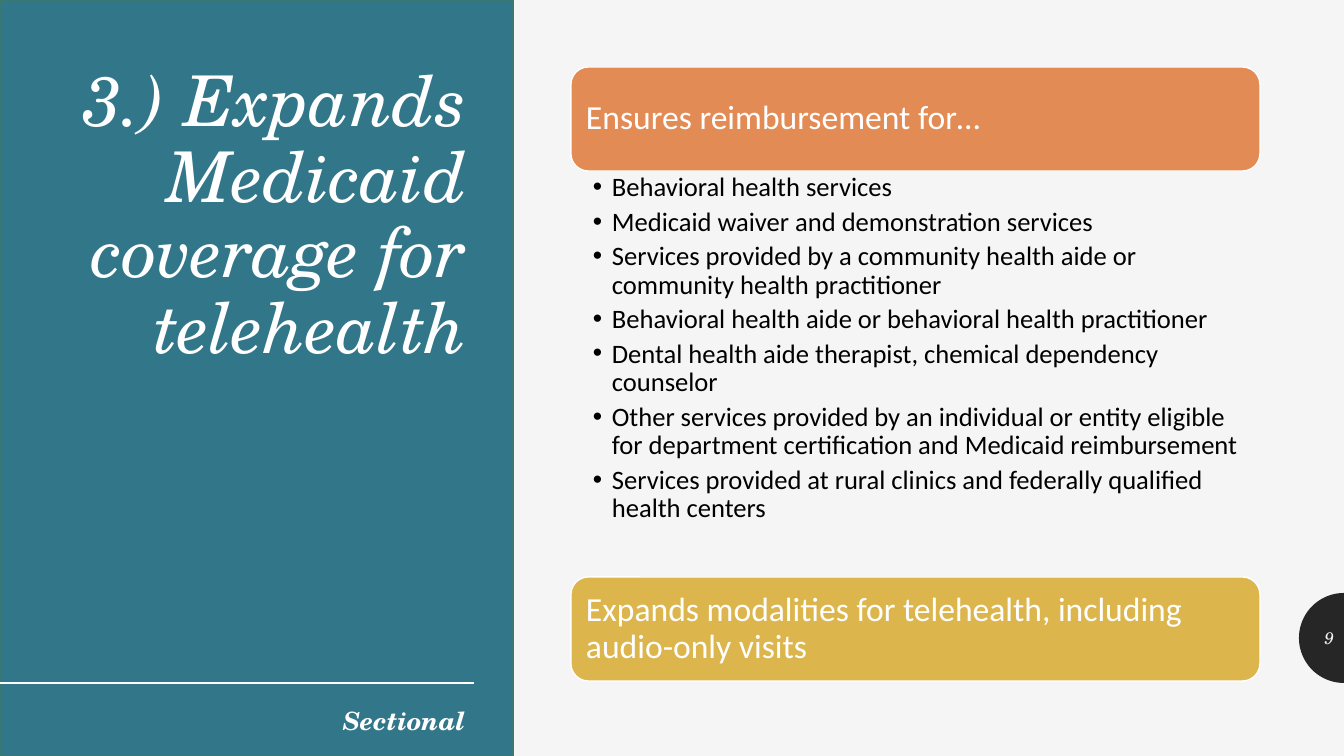
from math import cos, pi, sin

from lxml.etree import SubElement
from pptx import Presentation
from pptx.dml.color import RGBColor
from pptx.enum.shapes import MSO_CONNECTOR, MSO_SHAPE
from pptx.enum.text import MSO_ANCHOR, MSO_AUTO_SIZE, PP_ALIGN
from pptx.oxml.ns import qn
from pptx.util import Pt

EMU_PER_PX = 914400 / 100.8
SLIDE_WIDTH, SLIDE_HEIGHT = 1344, 756
TITLE_ONLY_LAYOUT = 5

COLORS = {
    "background": "F5F5F5",
    "panel": "327689",
    "panel_edge": "397972",
    "tab": "262626",
    "orange": "E28B55",
    "gold": "DCB64D",
    "white": "FFFFFF",
    "black": "000000",
}

SERIF, SANS = "TeX Gyre Schola", "Calibri"
DEFAULT_INSETS = (10, 5, 10, 5)
TITLE_FONT = {"name": SERIF, "size": Pt(50), "italic": True, "bold": False}
NUMBER_FONT = {"name": SERIF, "size": Pt(12), "italic": True}
SECTION_FONT = {"name": SERIF, "size": Pt(18), "italic": True, "bold": True}
CARD_FONT = {"name": SANS, "size": Pt(24)}
BULLET_FONT = {"name": SANS, "size": Pt(19)}

CARD_LEFT, CARD_WIDTH, CARD_HEIGHT = 571, 689, 104
CARDS = [
    (67, "orange", "Ensures reimbursement for…"),
    (577, "gold", "Expands modalities for telehealth, including audio-only visits"),
]
SERVICES = [
    "Behavioral health services",
    "Medicaid waiver and demonstration services",
    "Services provided by a community health aide or community health practitioner",
    "Behavioral health aide or behavioral health practitioner",
    "Dental health aide therapist, chemical dependency counselor",
    "Other services provided by an individual or entity eligible for department "
    "certification and Medicaid reimbursement",
    "Services provided at rural clinics and federally qualified health centers",
]


def px(length):
    return round(length * EMU_PER_PX)


def color(name):
    return RGBColor.from_string(COLORS[name])


def set_attributes(target, values):
    for name, value in values.items():
        setattr(target, name, value)


class SlideBuilder:
    def __init__(self, presentation):
        layout = presentation.slide_layouts[TITLE_ONLY_LAYOUT]
        self.slide = presentation.slides.add_slide(layout)
        self.shapes = self.slide.shapes
        background = self.slide.background.fill
        background.solid()
        background.fore_color.rgb = color("background")

    def paint(self, shape, fill, line=None):
        shape.shadow.inherit = False
        shape.fill.solid()
        shape.fill.fore_color.rgb = color(fill)
        if line:
            shape.line.color.rgb = color(line)
            shape.line.width = Pt(1)
        else:
            shape.line.fill.background()
        return shape

    def box(self, kind, bounds, fill, line):
        shape = self.shapes.add_shape(kind, *map(px, bounds))
        return self.paint(shape, fill, line)

    def half_disc(self, center_x, center_y, radius, fill):
        """Draw the left half of a disc whose flat side is at center_x."""
        steps = 40
        angles = [pi / 2 + pi * step / steps for step in range(steps + 1)]
        points = [
            (px(center_x + radius * cos(angle)), px(center_y + radius * sin(angle)))
            for angle in angles
        ]
        builder = self.shapes.build_freeform(*points[0])
        builder.add_line_segments(points[1:], close=True)
        return self.paint(builder.convert_to_shape(), fill)

    def rule(self, start, end, line):
        connector = self.shapes.add_connector(
            MSO_CONNECTOR.STRAIGHT, *map(px, start + end)
        )
        connector.line.color.rgb = color(line)
        connector.line.width = Pt(2)
        SubElement(connector.element.spPr, qn("a:effectLst"))

    def fill_text(self, shape, texts, font, ink, paragraph_format,
                  anchor=MSO_ANCHOR.TOP, insets=DEFAULT_INSETS, bulleted=False):
        frame = shape.text_frame
        sides = ("margin_left", "margin_top", "margin_right", "margin_bottom")
        set_attributes(frame, dict(zip(sides, map(px, insets))))
        set_attributes(frame, {
            "word_wrap": True,
            "auto_size": MSO_AUTO_SIZE.NONE,
            "vertical_anchor": anchor,
        })
        for index, text in enumerate(texts):
            paragraph = frame.add_paragraph() if index else frame.paragraphs[0]
            set_attributes(paragraph, paragraph_format)
            run = paragraph.add_run()
            run.text = text
            set_attributes(run.font, font)
            run.font.color.rgb = color(ink)
            if bulleted:
                self.add_bullet(paragraph)

    def add_bullet(self, paragraph):
        properties = paragraph._p.get_or_add_pPr()
        properties.set("marL", str(px(19)))
        properties.set("indent", str(-px(19)))
        SubElement(properties, qn("a:buFont")).set("typeface", "Arial")
        SubElement(properties, qn("a:buChar")).set("char", "•")

    def text_box(self, bounds, texts, *style, **options):
        shape = self.shapes.add_textbox(*map(px, bounds))
        self.fill_text(shape, texts, *style, **options)

    def title(self, bounds, text, *style):
        title = self.shapes.title
        sides = ("left", "top", "width", "height")
        set_attributes(title, dict(zip(sides, map(px, bounds))))
        self.fill_text(title, [text], *style)

    def send_behind_title(self, shape):
        self.shapes.title.element.addprevious(shape.element)


def main():
    presentation = Presentation()
    presentation.slide_width = px(SLIDE_WIDTH)
    presentation.slide_height = px(SLIDE_HEIGHT)
    builder = SlideBuilder(presentation)

    builder.half_disc(SLIDE_WIDTH, 638, 45, "tab")
    panel = builder.box(
        MSO_SHAPE.RECTANGLE, (0, 0, 513, SLIDE_HEIGHT), "panel", "panel_edge"
    )
    builder.send_behind_title(panel)
    builder.title(
        (55, 61, 422, 546), "3.) Expands Medicaid coverage for telehealth",
        TITLE_FONT, "white", {"alignment": PP_ALIGN.RIGHT, "line_spacing": 0.9},
    )
    builder.text_box(
        (1299, 618, 45, 40), ["9"], NUMBER_FONT, "background",
        {"alignment": PP_ALIGN.RIGHT}, anchor=MSO_ANCHOR.MIDDLE,
    )
    builder.rule((0, 683), (474, 683), "white")

    for top, fill, text in CARDS:
        card = builder.box(
            MSO_SHAPE.ROUNDED_RECTANGLE,
            (CARD_LEFT, top, CARD_WIDTH, CARD_HEIGHT), fill, "white",
        )
        builder.fill_text(
            card, [text], CARD_FONT, "white",
            {"alignment": PP_ALIGN.LEFT, "line_spacing": 0.9},
            anchor=MSO_ANCHOR.MIDDLE, insets=(10, 10, 10, 10),
        )
    builder.text_box(
        (CARD_LEFT, 171, CARD_WIDTH, 406), SERVICES, BULLET_FONT, "black",
        {"level": 1, "line_spacing": 0.9, "space_after": Pt(4)},
        insets=(22, 3, 19, 3), bulleted=True,
    )
    builder.text_box(
        (333, 700, 144, 40), ["Sectional"], SECTION_FONT, "white",
        {"alignment": PP_ALIGN.LEFT}, insets=(10, 5, 0, 5),
    )
    presentation.save("out.pptx")


if __name__ == "__main__":
    main()
